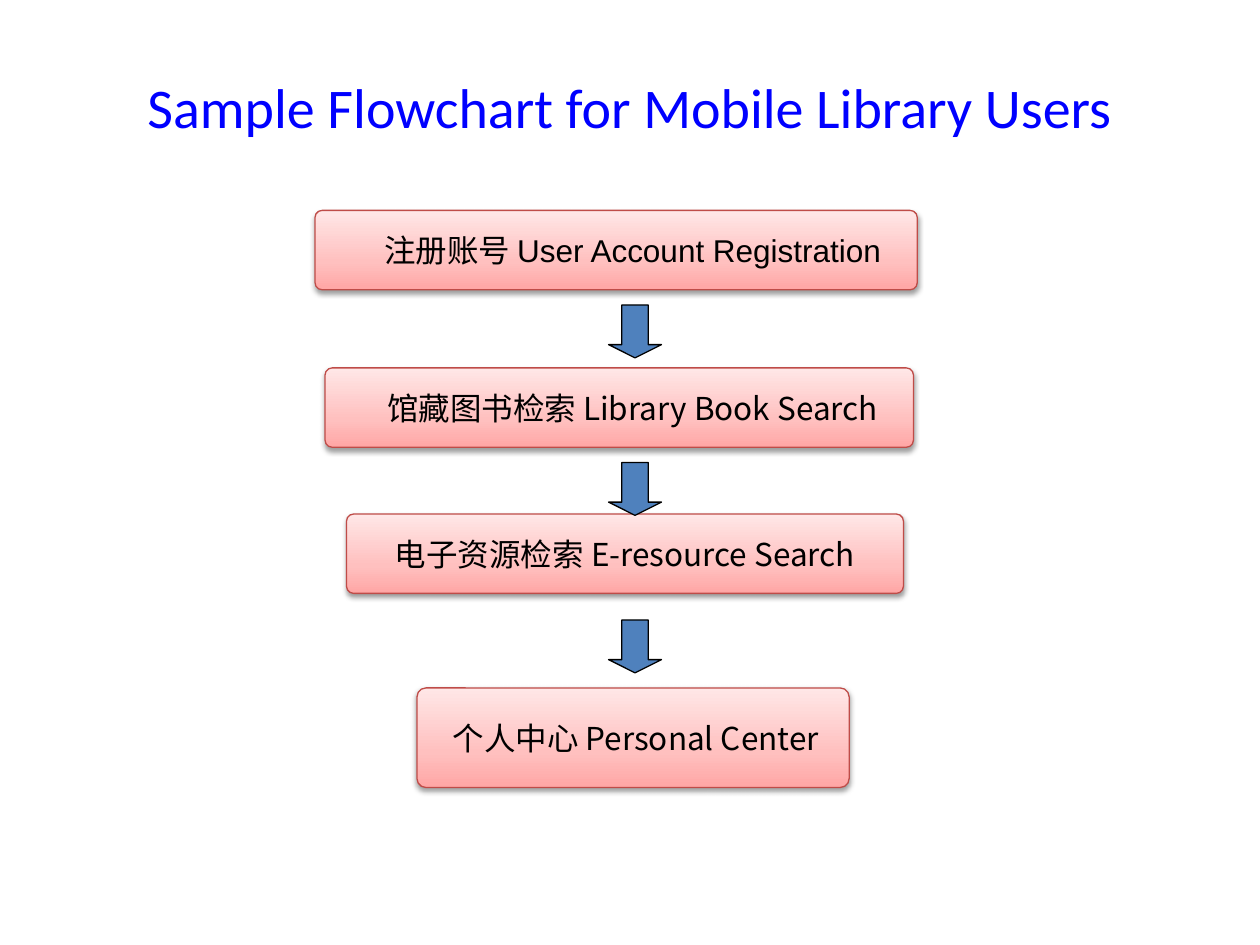
from copy import deepcopy

from lxml.etree import SubElement
from pptx import Presentation
from pptx.dml.color import RGBColor
from pptx.enum.shapes import MSO_SHAPE
from pptx.enum.text import MSO_ANCHOR, PP_ALIGN
from pptx.oxml.ns import qn
from pptx.util import Inches, Pt

BLACK = RGBColor(0x00, 0x00, 0x00)
BLUE = RGBColor(0x00, 0x00, 0xFF)
STEEL = RGBColor(0x4F, 0x81, 0xBD)
RED = RGBColor(0xBF, 0x4C, 0x48)
PINK_STOPS = [
    (0, RGBColor(0xFF, 0xA6, 0xA5)),
    (0.35, RGBColor(0xFF, 0xC0, 0xBF)),
    (1, RGBColor(0xFF, 0xE7, 0xE7)),
]
CHINESE_FONT = "Noto Sans CJK SC"
STEPS = [
    ((2.5, 1.67, 4.78, 0.63), 0.26, [("注册账号 ", CHINESE_FONT), ("User Account Registration", "Arial")]),
    ((2.58, 2.92, 4.67, 0.63), 0.21, [("馆藏图书检索 Library Book Search", CHINESE_FONT)]),
    ((2.75, 4.08, 4.42, 0.63), 0, [("电子资源检索 E-resource Search", CHINESE_FONT)]),
    ((3.31, 5.46, 3.43, 0.79), 0.04, [("个人中心 Personal Center", CHINESE_FONT)]),
]


def apply_format(target, values):
    """Set each attribute named in a dict."""
    for name, value in values.items():
        setattr(target, name, value)


def write_text(shape, runs, size, color, frame_format):
    """Write one centred paragraph of (text, font) runs."""
    frame = shape.text_frame
    apply_format(frame, {"vertical_anchor": MSO_ANCHOR.MIDDLE, **frame_format})
    paragraph = frame.paragraphs[0]
    paragraph.alignment = PP_ALIGN.CENTER
    for text, font_name in runs:
        run = paragraph.add_run()
        run.text = text
        apply_format(run.font, {"size": Pt(size), "name": font_name})
        run.font.color.rgb = color
        SubElement(run.font._element, qn("a:ea"), typeface=CHINESE_FONT)


def add_outlined_shape(slide, kind, box, adjustments, line_color):
    """Place a preset shape with a thin outline and no shadow."""
    shape = slide.shapes.add_shape(kind, *map(Inches, box))
    for index, value in enumerate(adjustments):
        shape.adjustments[index] = value
    shape.line.color.rgb = line_color
    shape.line.width = Pt(0.75)
    shape.shadow.inherit = False
    return shape


def fill_gradient(shape):
    """Fill a shape with pink that lightens upward."""
    shape.fill.gradient()
    shape.fill.gradient_angle = 90
    stop_list = shape._element.spPr.find(".//" + qn("a:gsLst"))
    stop_list.append(deepcopy(stop_list[-1]))
    for stop, (position, color) in zip(shape.fill.gradient_stops, PINK_STOPS):
        stop.position = position
        stop.color.rgb = color


def add_soft_shadow(shape):
    """Give a shape a soft shadow below it."""
    effects = shape._element.spPr.find(qn("a:effectLst"))
    shadow = SubElement(effects, qn("a:outerShdw"), blurRad=str(Pt(3.1)),
                        dist=str(Pt(1.6)), dir="5400000", rotWithShape="0")
    color = SubElement(shadow, qn("a:srgbClr"), val=str(BLACK))
    SubElement(color, qn("a:alpha"), val="38000")


def add_title(slide, box):
    """Place the slide title."""
    title = slide.shapes.add_textbox(*map(Inches, box))
    write_text(title, [("Sample Flowchart for Mobile Library Users", "Calibri")],
               32, BLUE, {"word_wrap": True})


def add_step(slide, box, indent, runs):
    """Place one step of the flowchart, its label shifted by an indent."""
    step = add_outlined_shape(slide, MSO_SHAPE.ROUNDED_RECTANGLE, box, [0.09], RED)
    fill_gradient(step)
    add_soft_shadow(step)
    write_text(step, runs, 18, BLACK,
               {"word_wrap": False, "margin_left": Inches(0.1 + indent)})


def add_arrow(slide, box):
    """Place one arrow that leads down to the next step."""
    arrow = add_outlined_shape(slide, MSO_SHAPE.DOWN_ARROW, box, [0.5, 0.25], BLACK)
    arrow.fill.solid()
    arrow.fill.fore_color.rgb = STEEL


def add_flowchart(slide, left, top, arrow_size, pitch):
    """Place the steps and the evenly spaced arrows between them."""
    for box, indent, runs in STEPS:
        add_step(slide, box, indent, runs)
    for index in range(len(STEPS) - 1):
        add_arrow(slide, (left, top + index * pitch, arrow_size, arrow_size))


def main():
    """Build and save the presentation."""
    presentation = Presentation()
    apply_format(presentation, {"slide_width": Inches(10), "slide_height": Inches(7.5)})
    slide = presentation.slides.add_slide(presentation.slide_layouts[6])
    add_title(slide, (1, 0.58, 8, 0.53))
    add_flowchart(slide, left=4.83, top=2.42, arrow_size=0.42, pitch=1.25)
    presentation.save("out.pptx")


if __name__ == "__main__":
    main()
